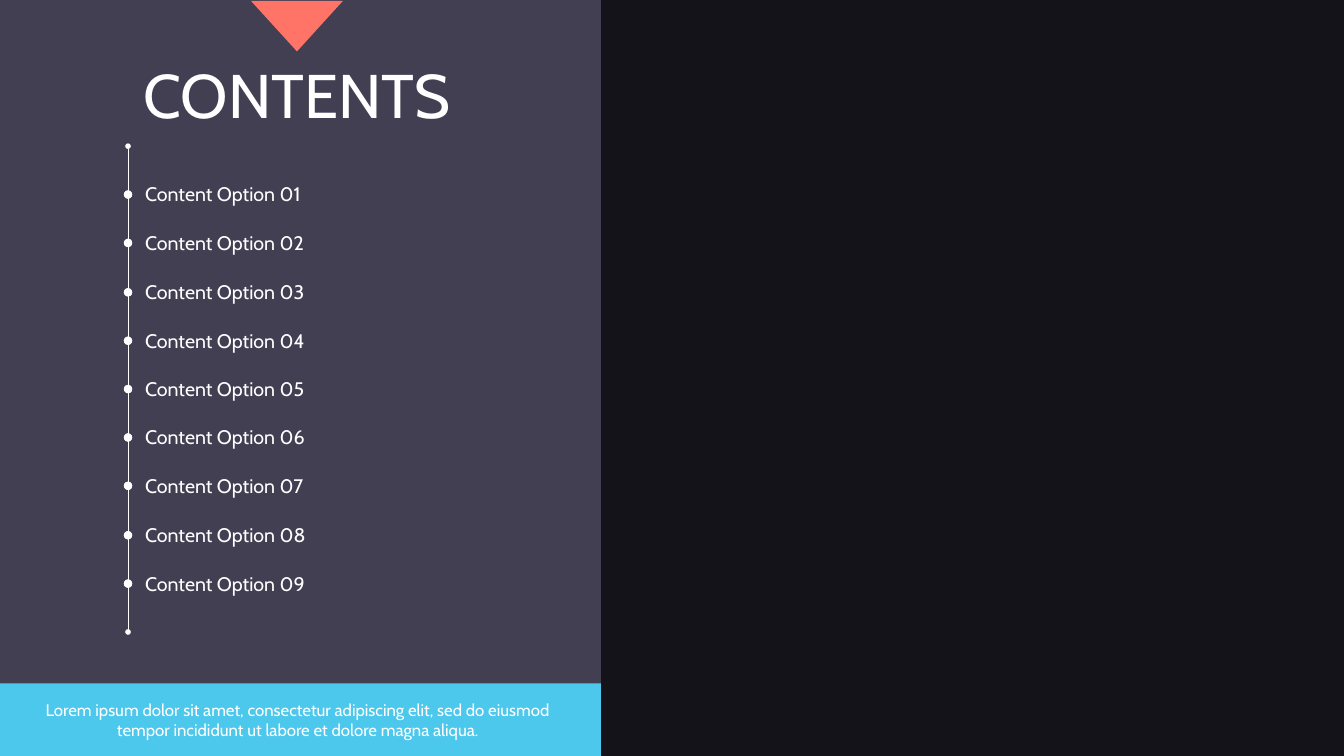
"""Build a contents slide with a dotted timeline of nine options."""
from dataclasses import dataclass
from typing import Optional

from lxml.etree import SubElement
from pptx import Presentation
from pptx.dml.color import RGBColor
from pptx.enum.shapes import MSO_CONNECTOR, MSO_SHAPE
from pptx.enum.text import MSO_ANCHOR, MSO_AUTO_SIZE, PP_ALIGN
from pptx.oxml.ns import qn
from pptx.shapes.autoshape import Shape
from pptx.slide import Slide
from pptx.util import Emu, Pt

EMU_PER_PX = 9144
SLIDE_WIDTH, SLIDE_HEIGHT = 1333, 750
PANEL_WIDTH = 596
FONT_NAME = "Cabin"

BLACK = RGBColor(0x00, 0x00, 0x00)
WHITE = RGBColor(0xFF, 0xFF, 0xFF)
PURPLE = RGBColor(0x52, 0x4E, 0x67)
CYAN = RGBColor(0x4C, 0xC8, 0xEC)
CORAL = RGBColor(0xFF, 0x74, 0x67)

OPTION_COUNT = 9
TIMELINE_X, TIMELINE_TOP, TIMELINE_BOTTOM = 127, 145, 627
OPTION_LEFT, OPTION_RISE = 134, 17


@dataclass(frozen=True)
class Box:
    left: int
    top: int
    width: int
    height: int


@dataclass(frozen=True)
class Panel:
    box: Box
    color: RGBColor
    opacity: Optional[int] = None
    preset: MSO_SHAPE = MSO_SHAPE.RECTANGLE
    rotation: int = 0


@dataclass(frozen=True)
class Label:
    box: Box
    text: str
    size: int
    alignment: PP_ALIGN = PP_ALIGN.LEFT


PANELS = (
    Panel(Box(0, 0, SLIDE_WIDTH, SLIDE_HEIGHT), BLACK, 75),
    Panel(Box(0, 0, PANEL_WIDTH, SLIDE_HEIGHT), PURPLE, 75),
    Panel(Box(0, 678, PANEL_WIDTH, 72), CYAN),
    Panel(Box(249, 1, 91, 50), CORAL, preset=MSO_SHAPE.ISOSCELES_TRIANGLE, rotation=180),
)
TITLE = Label(Box(95, 51, 400, 90), "CONTENTS", 44, PP_ALIGN.CENTER)
FOOTER = Label(
    Box(8, 689, 575, 50),
    "Lorem ipsum dolor sit amet, consectetur adipiscing elit, sed do eiusmod "
    "tempor incididunt ut labore et dolore magna aliqua.",
    12,
    PP_ALIGN.CENTER,
)


def px(value: int) -> Emu:
    return Emu(value * EMU_PER_PX)


def place(shape: Shape, box: Box) -> None:
    for name in ("left", "top", "width", "height"):
        setattr(shape, name, px(getattr(box, name)))


def add_panel(slide: Slide, panel: Panel) -> None:
    box = panel.box
    shape = slide.shapes.add_shape(
        panel.preset, px(box.left), px(box.top), px(box.width), px(box.height)
    )
    shape.rotation = panel.rotation
    shape.shadow.inherit = False
    shape.line.fill.background()
    shape.fill.solid()
    shape.fill.fore_color.rgb = panel.color
    if panel.opacity is not None:
        color = shape.element.spPr.find(f"{qn('a:solidFill')}/{qn('a:srgbClr')}")
        SubElement(color, qn("a:alpha"), val=str(panel.opacity * 1000))


def write_label(shape: Shape, label: Label) -> None:
    place(shape, label.box)
    frame = shape.text_frame
    frame.text = label.text
    frame_format = {
        "word_wrap": True,
        "auto_size": MSO_AUTO_SIZE.SHAPE_TO_FIT_TEXT,
        "vertical_anchor": MSO_ANCHOR.TOP,
    }
    for name, value in frame_format.items():
        setattr(frame, name, value)
    paragraph = frame.paragraphs[0]
    paragraph.alignment = label.alignment
    font = paragraph.runs[0].font
    for name, value in {"name": FONT_NAME, "size": Pt(label.size)}.items():
        setattr(font, name, value)
    font.color.rgb = WHITE


def add_label(slide: Slide, label: Label) -> None:
    write_label(slide.shapes.add_textbox(0, 0, 0, 0), label)


def add_segment(slide: Slide, top: int, bottom: int, head: str, tail: str) -> None:
    connector = slide.shapes.add_connector(
        MSO_CONNECTOR.STRAIGHT, px(TIMELINE_X), px(top), px(TIMELINE_X), px(bottom)
    )
    connector.line.color.rgb = WHITE
    connector.line.width = Pt(0.5)
    line = connector.get_or_add_ln()
    for tag, size in (("a:headEnd", head), ("a:tailEnd", tail)):
        SubElement(line, qn(tag), type="oval", w=size, len=size)
    SubElement(connector.element.spPr, qn("a:effectLst"))


def add_timeline(slide: Slide) -> None:
    segments = OPTION_COUNT + 1
    step = (TIMELINE_BOTTOM - TIMELINE_TOP) / segments
    stops = [round(TIMELINE_TOP + step * index) for index in range(segments + 1)]
    sizes = ["sm"] + ["med"] * OPTION_COUNT + ["sm"]
    for index in range(segments):
        add_segment(slide, *stops[index:index + 2], *sizes[index:index + 2])
    for number, stop in enumerate(stops[1:-1], start=1):
        box = Box(OPTION_LEFT, stop - OPTION_RISE, 200, 34)
        add_label(slide, Label(box, f"Content Option {number:02d}", 14))


def main() -> None:
    presentation = Presentation()
    presentation.slide_width = px(SLIDE_WIDTH)
    presentation.slide_height = px(SLIDE_HEIGHT)
    slide = presentation.slides.add_slide(presentation.slide_layouts[5])
    slide.background.fill.solid()
    slide.background.fill.fore_color.rgb = PURPLE
    for panel in PANELS:
        add_panel(slide, panel)
    title = slide.shapes.title
    title.element.getparent().append(title.element)
    write_label(title, TITLE)
    add_timeline(slide)
    add_label(slide, FOOTER)
    presentation.save("out.pptx")


if __name__ == "__main__":
    main()
